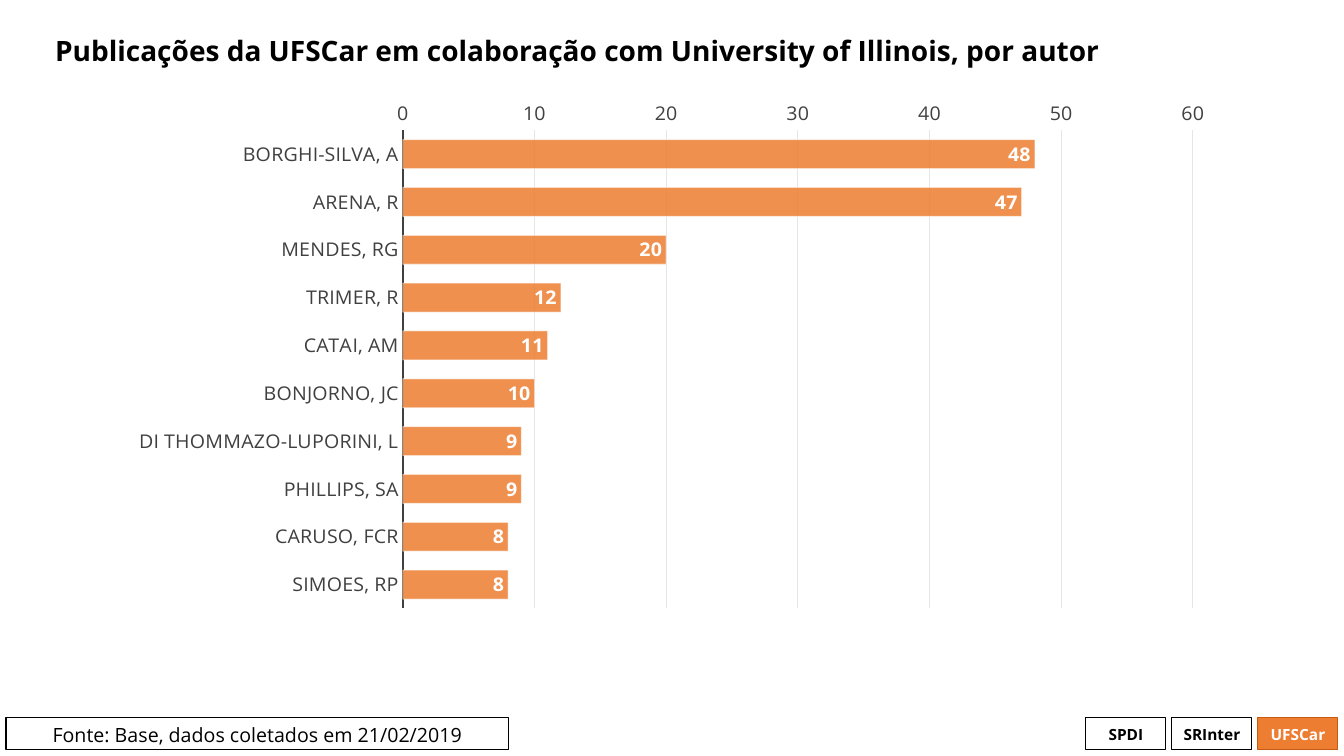
"""Build a slide with a bar chart of joint publications by author."""
from lxml.etree import SubElement
from pptx import Presentation
from pptx.chart.data import CategoryChartData
from pptx.dml.color import RGBColor
from pptx.enum.chart import (XL_AXIS_CROSSES as CROSSES, XL_CHART_TYPE as CHART,
                             XL_LABEL_POSITION as LABEL, XL_TICK_MARK as TICK)
from pptx.enum.shapes import MSO_SHAPE as SHAPE
from pptx.enum.text import MSO_ANCHOR as ANCHOR, PP_ALIGN as ALIGN
from pptx.oxml import parse_xml
from pptx.oxml.ns import nsdecls, qn
from pptx.util import Emu, Pt

BLACK = RGBColor(0x00, 0x00, 0x00)
WHITE = RGBColor(0xFF, 0xFF, 0xFF)
GRAY = RGBColor(0x40, 0x40, 0x40)
GRID = RGBColor(0xE6, 0xE6, 0xE6)
ORANGE = RGBColor(0xED, 0x7D, 0x31)
DARK_ORANGE = RGBColor(0xC5, 0x5A, 0x11)
FONT = "Open Sans"

AUTHORS = {
    "BORGHI-SILVA, A": 48, "ARENA, R": 47, "MENDES, RG": 20, "TRIMER, R": 12,
    "CATAI, AM": 11, "BONJORNO, JC": 10, "DI THOMMAZO-LUPORINI, L": 9,
    "PHILLIPS, SA": 9, "CARUSO, FCR": 8, "SIMOES, RP": 8,
}
TAGS = [("SPDI", None, BLACK, BLACK), ("SRInter", None, BLACK, BLACK),
        ("UFSCar", ORANGE, DARK_ORANGE, WHITE)]


def px(*lengths):
    """Turn pixel lengths into EMU."""
    return [Emu(round(length * 914400 / 100.8)) for length in lengths]


def style_font(font, size, color, bold=False):
    """Apply the slide's typeface with the given size, colour and weight."""
    for name, value in {"name": FONT, "size": Pt(size), "bold": bold}.items():
        setattr(font, name, value)
    font.color.rgb = color


def style_line(line, color, width=0.75):
    """Set a line's colour and width."""
    line.color.rgb = color
    line.width = Pt(width)


def add_title(page, box, text):
    """Fill and place the title placeholder."""
    title = page.shapes.title
    title.left, title.top, title.width, title.height = px(*box)
    title.text_frame.text = text
    title.text_frame.vertical_anchor = ANCHOR.MIDDLE
    para = title.text_frame.paragraphs[0]
    para.alignment, para.line_spacing = ALIGN.LEFT, 0.9
    style_font(para.runs[0].font, 20, BLACK, True)


def add_label_box(page, box, text, fill, border, color, size, bold, anchor):
    """Add an outlined rectangle with centred text."""
    shape = page.shapes.add_shape(SHAPE.RECTANGLE, *px(*box))
    shape.shadow.inherit = False
    if fill is None:
        shape.fill.background()
    else:
        shape.fill.solid()
        shape.fill.fore_color.rgb = fill
    style_line(shape.line, border)
    frame = shape.text_frame
    frame.text, frame.vertical_anchor, frame.word_wrap = text, anchor, True
    if bold:
        frame.margin_left = frame.margin_right = 0
    frame.paragraphs[0].alignment = ALIGN.CENTER
    style_font(frame.paragraphs[0].runs[0].font, size, color, bold)


def add_footer(page, box):
    """Add the source box on the left and the row of tags on the right."""
    left, top, width, height = box
    add_label_box(page, (left, top, 503, height),
                  "Fonte: Base, dados coletados em 21/02/2019",
                  None, BLACK, BLACK, 14, False, ANCHOR.TOP)
    tag_width, pitch = 80, 86
    first = left + width - tag_width - pitch * (len(TAGS) - 1)
    for index, (text, fill, border, color) in enumerate(TAGS):
        add_label_box(page, (first + index * pitch, top, tag_width, height),
                      text, fill, border, color, 11, True, ANCHOR.MIDDLE)


def style_axes(chart):
    """Format the reversed author axis and the count axis."""
    authors, counts = chart.category_axis, chart.value_axis
    for axis in (authors, counts):
        axis.major_tick_mark = axis.minor_tick_mark = TICK.NONE
        style_font(axis.tick_labels.font, 14, GRAY)
    authors.reverse_order = True
    authors.crosses = CROSSES.MAXIMUM
    authors.has_major_gridlines = False
    style_line(authors.format.line, GRAY, 1.5)
    limits = {"minimum_scale": 0, "maximum_scale": 60, "major_unit": 10,
              "has_major_gridlines": True}
    for name, value in limits.items():
        setattr(counts, name, value)
    counts.format.line.fill.background()
    style_line(counts.major_gridlines.format.line, GRID)


def style_bars(plot):
    """Format the translucent bars and their value labels."""
    plot.gap_width, plot.vary_by_categories = 65, False
    series = plot.series[0]
    series.invert_if_negative = False
    series.format.fill.solid()
    series.format.fill.fore_color.rgb = ORANGE
    style_line(series.format.line, WHITE)
    colors = series._element.xpath("c:spPr//a:srgbClr")
    for color, alpha in zip(colors, ("85000", "50000")):
        SubElement(color, qn("a:alpha")).set("val", alpha)
    labels = series.data_labels
    labels.show_value, labels.position = True, LABEL.INSIDE_END
    style_font(labels.font, 14, WHITE, True)


def set_plot_area(chart, chart_box, plot_box):
    """Fix the inner plot area at a box given in slide pixels."""
    left, top, width, height = chart_box
    fractions = {"x": (plot_box[0] - left) / width, "y": (plot_box[1] - top) / height,
                 "w": plot_box[2] / width, "h": plot_box[3] / height}
    sizes = "".join(f'<c:{name} val="{value:.4f}"/>' for name, value in fractions.items())
    layout = parse_xml(
        f'<c:layout {nsdecls("c")}><c:manualLayout><c:layoutTarget val="inner"/>'
        f'<c:xMode val="edge"/><c:yMode val="edge"/>{sizes}</c:manualLayout></c:layout>')
    area = chart._chartSpace.chart.plotArea
    for old in area.findall(qn("c:layout")):
        area.remove(old)
    area.insert(0, layout)


def add_author_chart(page, box):
    """Add the bar chart of publications by author."""
    left, top, width, height = box
    data = CategoryChartData()
    data.categories = list(AUTHORS)
    data.add_series("Series 1", list(AUTHORS.values()))
    chart = page.shapes.add_chart(CHART.BAR_CLUSTERED, *px(*box), data).chart
    chart.has_legend = chart.has_title = False
    style_font(chart.font, 14, BLACK)
    style_axes(chart)
    style_bars(chart.plots[0])
    set_plot_area(chart, box, (left + 287, top + 12, width - 321, height - 60))


def main():
    """Build and save the deck."""
    deck = Presentation()
    deck.slide_width, deck.slide_height = px(1344, 756)
    page = deck.slides.add_slide(deck.slide_layouts[5])
    add_footer(page, (6, 718, 1332, 32))
    add_title(page, (45, 6, 1251, 92),
              "Publicações da UFSCar em colaboração com University of Illinois, por autor")
    add_author_chart(page, (116, 100, 1111, 555))
    deck.save("out.pptx")


if __name__ == "__main__":
    main()
